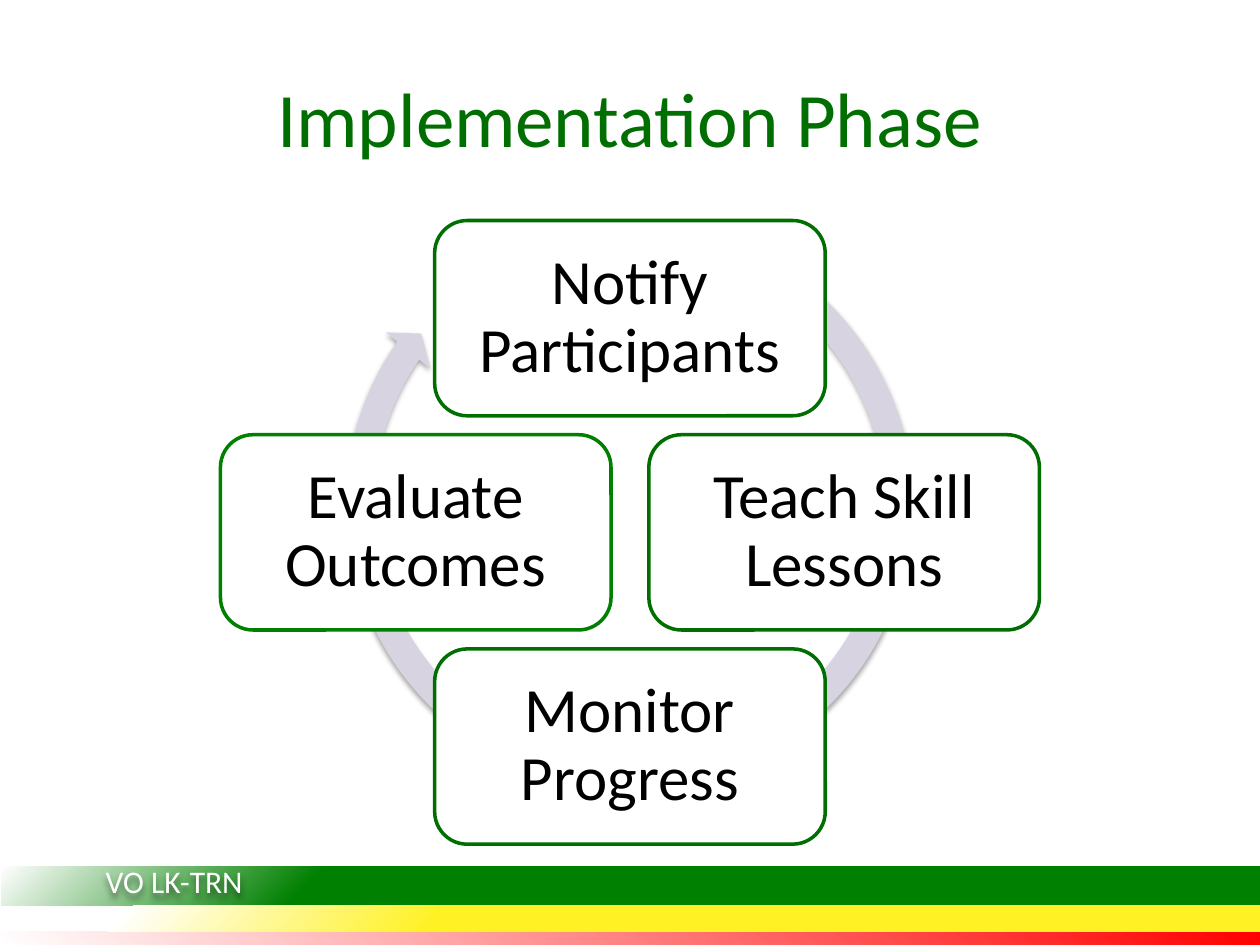
from lxml import etree
from pptx import Presentation
from pptx import util as u
from pptx.dml.color import RGBColor
from pptx.enum import shapes, text
from pptx.oxml import parse_xml
from pptx.oxml.ns import nsdecls, qn

COLORS = {
    "title": "006E00", "border": "006E00", "last_border": "008000",
    "arrow": "D8D3E0", "ink": "000000", "white": "FFFFFF",
    "red": "FF0000", "green": "008000", "yellow": "FFF123",
}


def color(name):
    return RGBColor.from_string(COLORS[name])


def cast_shadow(shape, blur, distance, alpha):
    shape.shadow.inherit = False
    effects = shape._element.spPr.find(qn("a:effectLst"))
    effects.append(parse_xml(
        f'<a:outerShdw {nsdecls("a")} blurRad="{u.Pt(blur)}" '
        f'dist="{u.Pt(distance)}" dir="5400000" rotWithShape="0">'
        f'<a:srgbClr val="{COLORS["ink"]}"><a:alpha val="{alpha * 1000}"/></a:srgbClr>'
        '</a:outerShdw>'))


def write(frame, words, size, ink="ink", align=text.PP_ALIGN.CENTER,
          anchor=text.MSO_ANCHOR.MIDDLE, inset=None, spacing=None):
    frame.word_wrap = True
    frame.vertical_anchor = anchor
    if inset is not None:
        frame.margin_left = frame.margin_right = u.Inches(inset)
        frame.margin_top = frame.margin_bottom = u.Inches(inset)
    paragraph = frame.paragraphs[0]
    paragraph.alignment = align
    paragraph.line_spacing = spacing
    run = paragraph.add_run()
    run.text = words
    run.font.size = u.Pt(size)
    run.font.name = "Calibri"
    run.font.color.rgb = color(ink)


class SlideBuilder:
    """Holds the style and the current slide, and adds each kind of element."""

    def __init__(self, slide):
        self.slide = slide
        self.border_width = u.Pt(2)

    def shape(self, kind, *box):
        added = self.slide.shapes.add_shape(kind, *map(u.Inches, box))
        added.shadow.inherit = False
        added.line.fill.background()
        return added

    def label(self, words, box, size, **style):
        area = self.slide.shapes.add_textbox(*map(u.Inches, box))
        write(area.text_frame, words, size, **style)
        return area

    def cycle_arrow(self, box, adjustments):
        arrow = self.shape(shapes.MSO_SHAPE.CIRCULAR_ARROW, *box)
        for index, value in enumerate(adjustments):
            arrow.adjustments[index] = value
        arrow.fill.solid()
        arrow.fill.fore_color.rgb = color("arrow")
        cast_shadow(arrow, 3.1, 1.8, 35)

    def step(self, words, box, border):
        card = self.shape(shapes.MSO_SHAPE.ROUNDED_RECTANGLE, *box)
        card.fill.solid()
        card.fill.fore_color.rgb = color("white")
        card.line.color.rgb = color(border)
        card.line.width = self.border_width
        write(card.text_frame, words, 36, inset=0.15, spacing=0.9)

    def stripe(self, hue, top, height, start, end, focus):
        band = self.shape(shapes.MSO_SHAPE.RECTANGLE, 0.01, top, 10, height)
        band.fill.gradient()
        stops = zip(band.fill.gradient_stops, (hue, "white"), (start, end))
        for stop, name, position in stops:
            stop.color.rgb = color(name)
            stop.position = position
        gradient = band._element.spPr.find(qn("a:gradFill"))
        gradient.remove(gradient.find(qn("a:lin")))
        radial = etree.SubElement(gradient, qn("a:path"), {"path": "circle"})
        etree.SubElement(radial, qn("a:fillToRect"), {side: "100000" for side in focus})


def main():
    deck = Presentation()
    deck.slide_width, deck.slide_height = u.Inches(10), u.Inches(7.5)
    builder = SlideBuilder(deck.slides.add_slide(deck.slide_layouts[6]))

    builder.label("Implementation Phase", (0.5, 0.3, 9, 1.25), 44, ink="title")

    builder.cycle_arrow((2.63, 1.64, 4.73, 4.73),
                        (0.047, 2.729, 128.918, 179.897, 0.048))
    center_x, center_y, offset, width, height = 5, 4.225, 1.7, 3.1, 1.55
    steps = (
        ("Notify Participants", 0, -1, "border"),
        ("Teach Skill Lessons", 1, 0, "border"),
        ("Monitor Progress", 0, 1, "border"),
        ("Evaluate Outcomes", -1, 0, "last_border"),
    )
    for words, across, down, border in steps:
        left = center_x + across * offset - width / 2
        top = center_y + down * offset - height / 2
        builder.step(words, (left, top, width, height), border)

    builder.stripe("red", 7.39, 0.12, 0, 1, "lb")
    builder.stripe("green", 6.88, 0.31, 0.75, 1, "lt")
    builder.stripe("yellow", 7.19, 0.2, 0.65, 0.9, "lt")
    footer = builder.label("VO LK-TRN", (0.74, 6.79, 1.92, 0.4), 18, ink="white",
                           align=text.PP_ALIGN.LEFT, anchor=text.MSO_ANCHOR.TOP)
    cast_shadow(footer, 4, 3, 45)

    deck.save("out.pptx")


if __name__ == "__main__":
    main()
